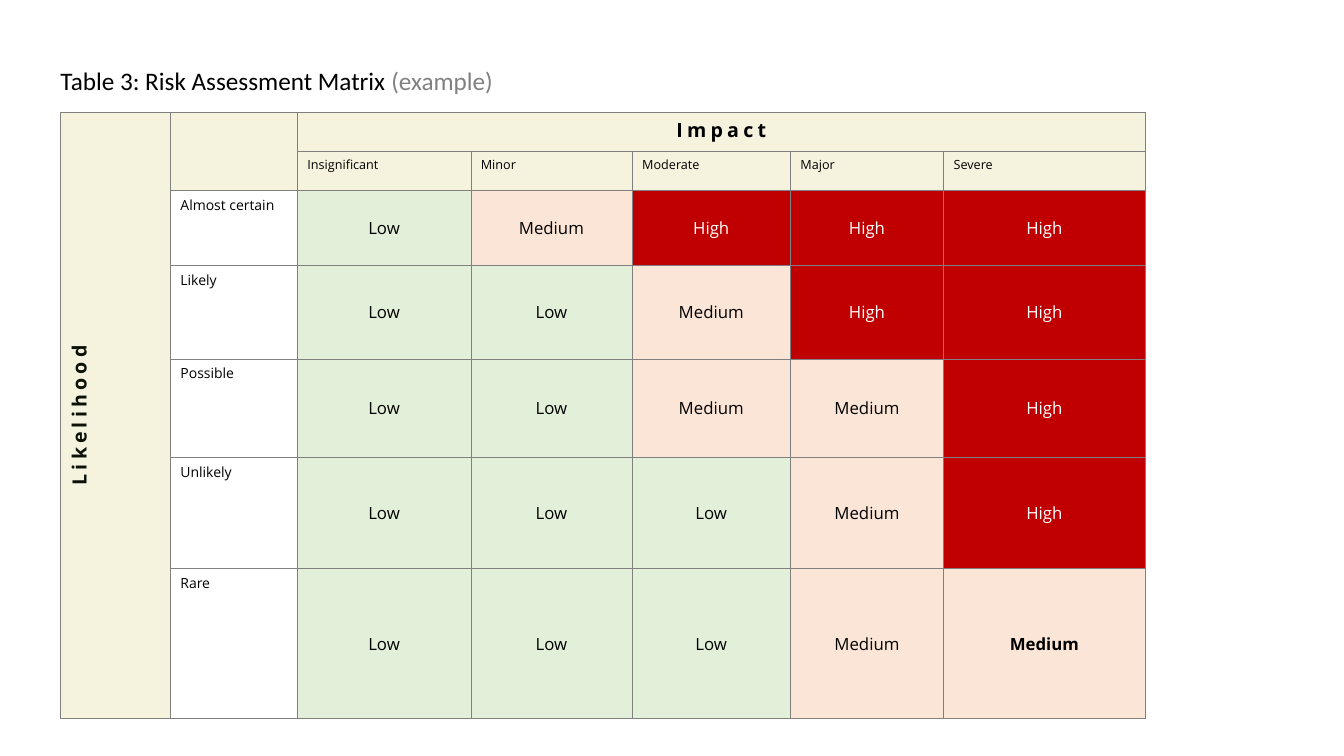
from dataclasses import dataclass

from lxml.etree import SubElement
from pptx import Presentation
from pptx.dml.color import RGBColor
from pptx.enum.text import MSO_ANCHOR, PP_ALIGN
from pptx.oxml.ns import qn
from pptx.util import Inches, Pt

TITLE = "Table 3: Risk Assessment Matrix "
TITLE_NOTE = "(example)"
ROW_AXIS, COLUMN_AXIS = "Likelihood", "Impact"
IMPACTS = ["Insignificant", "Minor", "Moderate", "Major", "Severe"]
RATINGS = {
    "Almost certain": ["Low", "Medium", "High", "High", "High"],
    "Likely": ["Low", "Low", "Medium", "High", "High"],
    "Possible": ["Low", "Low", "Medium", "Medium", "High"],
    "Unlikely": ["Low", "Low", "Low", "Medium", "High"],
    "Rare": ["Low", "Low", "Low", "Medium", "Medium"],
}
COLUMN_WIDTHS = [1.09, 1.26, 1.72, 1.6, 1.57, 1.52, 2]
ROW_HEIGHTS = [0.39, 0.39, 0.74, 0.93, 0.98, 1.1, 1.12]
TABLE_LEFT, TABLE_TOP = 0.6, 1.11
FIRST_ROW = FIRST_COLUMN = 2


@dataclass(frozen=True)
class Theme:
    title_font: str = "Calibri"
    table_font: str = "Open Sans"
    title_size: int = 18
    axis_size: int = 14
    impact_size: int = 9
    likelihood_size: int = 10
    rating_size: int = 12
    axis_spacing: int = 3
    border_width: float = 0.25
    black: str = "000000"
    white: str = "FFFFFF"
    grey: str = "808080"
    axis_text: str = "0B1107"
    header_fill: str = "F5F2DE"


THEME = Theme()
RATING_COLORS = {  # fill, text
    "Low": ("E2F0D9", THEME.black),
    "Medium": ("FBE5D6", THEME.black),
    "High": ("C00000", THEME.white),
}


def set_font(font, name, size, color, bold=False):
    font.name, font.size, font.bold = name, Pt(size), bold
    font.color.rgb = RGBColor.from_string(color)


def add_borders(cell):
    properties = cell._tc.get_or_add_tcPr()
    for position, side in enumerate(("lnL", "lnR", "lnT", "lnB")):
        line = SubElement(properties, qn(f"a:{side}"), w=str(Pt(THEME.border_width)))
        fill = SubElement(line, qn("a:solidFill"))
        SubElement(fill, qn("a:srgbClr"), val=THEME.grey)
        properties.insert(position, line)  # borders precede the fill


def format_cell(cell, text, size, fill, color=THEME.black, bold=False, centered=False):
    cell.fill.solid()
    cell.fill.fore_color.rgb = RGBColor.from_string(fill)
    cell.text = text
    paragraph = cell.text_frame.paragraphs[0]
    set_font(paragraph.font, THEME.table_font, size, color, bold)
    if centered:
        paragraph.alignment = PP_ALIGN.CENTER
        cell.vertical_anchor = MSO_ANCHOR.MIDDLE


def format_axis(cell, text, color):
    format_cell(cell, text, THEME.axis_size, THEME.header_fill, color, True, True)
    run = cell.text_frame.paragraphs[0].runs[0]
    run._r.get_or_add_rPr().set("spc", str(THEME.axis_spacing * 100))


def add_title(slide):
    title = slide.shapes.title
    title.left, title.top = Inches(0.5), Inches(0.6)
    title.width, title.height = Inches(5.19), Inches(0.4)
    frame = title.text_frame
    frame.word_wrap = True
    frame.vertical_anchor = MSO_ANCHOR.TOP
    paragraph = frame.paragraphs[0]
    paragraph.alignment = PP_ALIGN.LEFT
    for text, color in ((TITLE, THEME.black), (TITLE_NOTE, THEME.grey)):
        run = paragraph.add_run()
        run.text = text
        set_font(run.font, THEME.title_font, THEME.title_size, color)


def add_matrix(slide):
    table = slide.shapes.add_table(
        len(ROW_HEIGHTS), len(COLUMN_WIDTHS), Inches(TABLE_LEFT), Inches(TABLE_TOP),
        Inches(sum(COLUMN_WIDTHS)), Inches(sum(ROW_HEIGHTS))).table
    table.first_row = table.horz_banding = False
    for column, width in zip(table.columns, COLUMN_WIDTHS):
        column.width = Inches(width)
    for row, height in zip(table.rows, ROW_HEIGHTS):
        row.height = Inches(height)

    last_row, last_column = len(ROW_HEIGHTS) - 1, len(COLUMN_WIDTHS) - 1
    likelihood, corner, impact = (table.cell(0, column) for column in range(3))
    likelihood.merge(table.cell(last_row, 0))
    corner.merge(table.cell(1, 1))
    impact.merge(table.cell(0, last_column))
    format_axis(likelihood, ROW_AXIS, THEME.axis_text)
    likelihood._tc.get_or_add_tcPr().set("vert", "vert270")
    format_cell(corner, "", THEME.impact_size, THEME.header_fill)
    format_axis(impact, COLUMN_AXIS, THEME.black)
    impact.vertical_anchor = MSO_ANCHOR.TOP

    for column, name in enumerate(IMPACTS, FIRST_COLUMN):
        format_cell(table.cell(1, column), name, THEME.impact_size, THEME.header_fill)
    for row, (name, ratings) in enumerate(RATINGS.items(), FIRST_ROW):
        format_cell(table.cell(row, 1), name, THEME.likelihood_size, THEME.white)
        for column, rating in enumerate(ratings, FIRST_COLUMN):
            fill, color = RATING_COLORS[rating]
            is_last = (row, column) == (last_row, last_column)
            format_cell(table.cell(row, column), rating, THEME.rating_size,
                        fill, color, is_last, True)
    for cell in table.iter_cells():
        add_borders(cell)


def main():
    presentation = Presentation()
    presentation.slide_width, presentation.slide_height = Inches(13.33), Inches(7.5)
    slide = presentation.slides.add_slide(presentation.slide_layouts[5])
    add_title(slide)
    add_matrix(slide)
    presentation.save("out.pptx")


if __name__ == "__main__":
    main()
